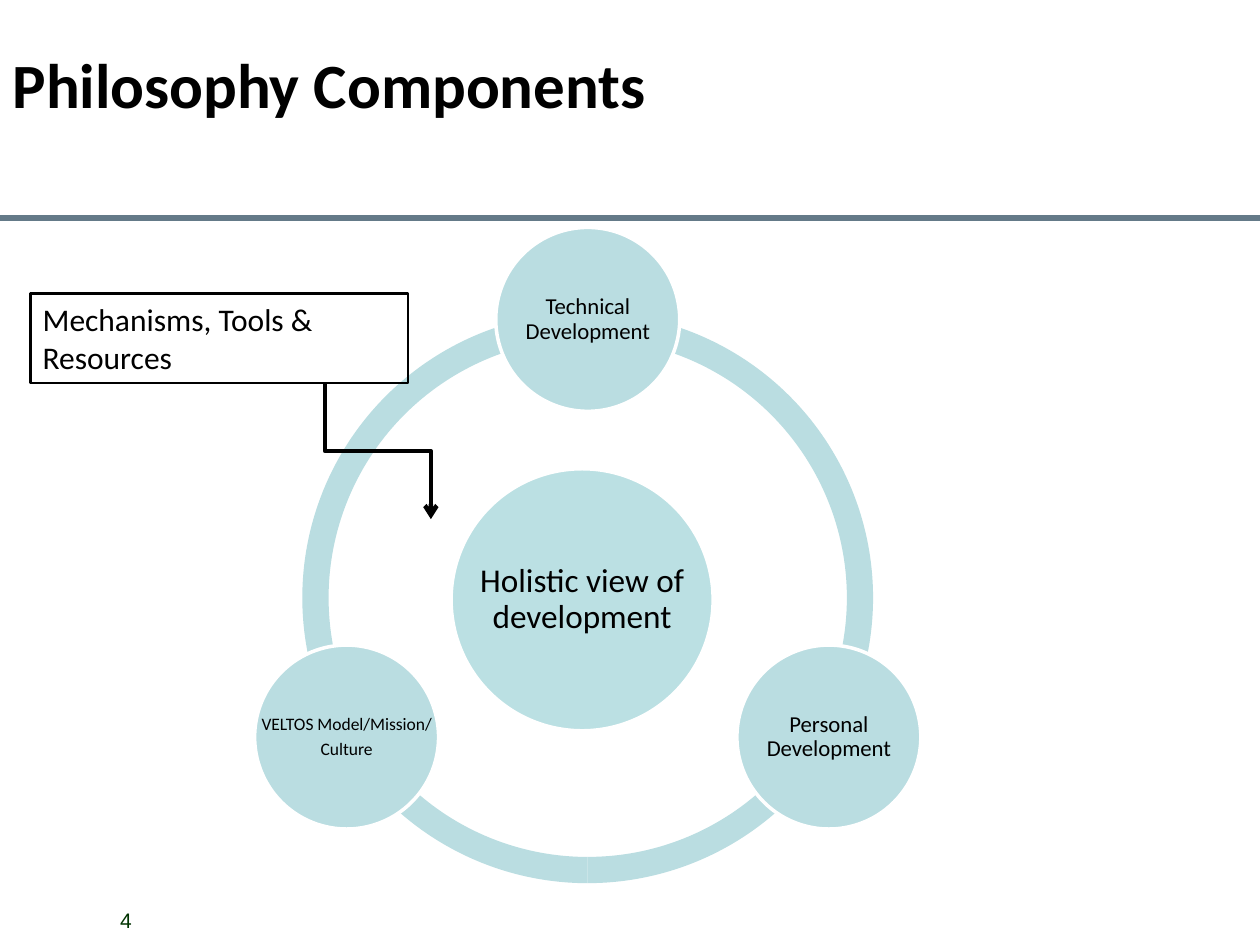
import math

import lxml.etree
import pptx
import pptx.dml.color
import pptx.enum.shapes
import pptx.enum.text
import pptx.oxml.ns
import pptx.util

Inches = pptx.util.Inches
Pt = pptx.util.Pt
RGBColor = pptx.dml.color.RGBColor
SHAPE = pptx.enum.shapes.MSO_SHAPE
CONNECTOR = pptx.enum.shapes.MSO_CONNECTOR
ALIGN = pptx.enum.text.PP_ALIGN
ANCHOR = pptx.enum.text.MSO_ANCHOR

BLACK = RGBColor(0x00, 0x00, 0x00)
WHITE = RGBColor(0xFF, 0xFF, 0xFF)
SLATE = RGBColor(0x64, 0x7A, 0x88)
DARK_GREEN = RGBColor(0x00, 0x33, 0x00)
RING_TEAL = RGBColor(0xBA, 0xDD, 0xE1)
CENTRE_TEAL = RGBColor(0xBB, 0xE0, 0xE3)

NODES = [
    (["Technical Development"], -90, 13, 0.02),
    (["Personal Development"], 30, 13, 0.02),
    (["VELTOS Model/Mission/", "Culture"], 150, 10, 0.01),
]


def write_text(shape, paragraphs, size, color=BLACK, font="Calibri", bold=False,
               align=ALIGN.LEFT, anchor=ANCHOR.MIDDLE, inset=None,
               line_spacing=None, space_after=None):
    """Fill a shape with formatted paragraphs."""
    frame = shape.text_frame
    frame.text = "\n".join(paragraphs)
    frame.word_wrap = True
    frame.vertical_anchor = anchor
    if inset is not None:
        frame.margin_left = frame.margin_right = Inches(inset)
        frame.margin_top = frame.margin_bottom = Inches(inset)
    for paragraph in frame.paragraphs:
        paragraph.alignment = align
        paragraph.line_spacing = line_spacing
        paragraph.space_after = space_after
        paragraph.font.name = font
        paragraph.font.size = Pt(size)
        paragraph.font.bold = bold
        paragraph.font.color.rgb = color


def add_preset(slide, preset, box, fill=None, line=None, width=1):
    """Add a shadowless preset shape with an optional fill and line."""
    shape = slide.shapes.add_shape(preset, *map(Inches, box))
    shape.shadow.inherit = False
    if fill is None:
        shape.fill.background()
    else:
        shape.fill.solid()
        shape.fill.fore_color.rgb = fill
    if line is None:
        shape.line.fill.background()
    else:
        shape.line.color.rgb = line
        shape.line.width = Pt(width)
    return shape


def add_line(slide, kind, begin, end, color, width):
    """Add a shadowless connector between two points."""
    connector = slide.shapes.add_connector(kind, *map(Inches, (*begin, *end)))
    connector.line.color.rgb = color
    connector.line.width = Pt(width)
    properties = connector._element.spPr
    lxml.etree.SubElement(properties, pptx.oxml.ns.qn("a:effectLst"))
    return connector


def add_title(slide, box):
    """Place and format the title."""
    title = slide.shapes.title
    title.left, title.top, title.width, title.height = map(Inches, box)
    write_text(title, ["Philosophy Components"], 36, bold=True)


def add_slide_number(slide, box):
    """Add the slide number."""
    number = slide.shapes.add_textbox(*map(Inches, box))
    write_text(number, ["4"], 12, color=DARK_GREEN, font="Arial", align=ALIGN.CENTER)


def add_circle(slide, box, fill, paragraphs, size, inset):
    """Add a circle with a label spanning its full width."""
    add_preset(slide, SHAPE.OVAL, box, fill=fill, line=WHITE, width=2)
    label = slide.shapes.add_textbox(*map(Inches, box))
    write_text(label, paragraphs, size, align=ALIGN.CENTER, inset=inset,
               line_spacing=0.9, space_after=Pt(size * 0.35))


def add_cycle(slide, box):
    """Draw the ring of arcs, the central circle and the three outer circles."""
    left, top, width, height = box
    for start, end in [(90, 162), (18, 90), (162, 18)]:
        arc = add_preset(slide, SHAPE.BLOCK_ARC, box, fill=RING_TEAL)
        arc.adjustments[0] = start * 0.6
        arc.adjustments[1] = end * 0.6
        arc.adjustments[2] = 0.046
    add_circle(slide, (left + 1.18, top + 1.24, 2.08, 2.08), CENTRE_TEAL,
               ["Holistic view of development"], 19, 0.03)
    diameter, radius = 1.46, 2.21
    for paragraphs, degrees, size, inset in NODES:
        angle = math.radians(degrees)
        node_left = left + width / 2 + radius * math.cos(angle) - diameter / 2
        node_top = top + height / 2 + radius * math.sin(angle) - diameter / 2
        add_circle(slide, (node_left, node_top, diameter, diameter), RING_TEAL,
                   paragraphs, size, inset)


def add_callout(slide, box):
    """Add the boxed note and its downward elbow arrow."""
    left, top, width, height = box
    note = add_preset(slide, SHAPE.RECTANGLE, box, line=BLACK, width=1.5)
    write_text(note, ["Mechanisms, Tools & Resources"], 18, anchor=ANCHOR.TOP)

    run, drop = 0.84, 1.08
    centre_x = left + 2.34 + run / 2
    centre_y = top + height + drop / 2
    arrow = add_line(slide, CONNECTOR.ELBOW,
                     (centre_x + drop / 2, centre_y - run / 2),
                     (centre_x - drop / 2, centre_y + run / 2), BLACK, 2.5)
    arrow._element.spPr.find(pptx.oxml.ns.qn("a:xfrm")).set("rot", str(270 * 60000))
    outline = arrow.line._get_or_add_ln()
    lxml.etree.SubElement(outline, pptx.oxml.ns.qn("a:tailEnd"), type="arrow")


def main():
    """Build and save the presentation."""
    presentation = pptx.Presentation()
    presentation.slide_width = Inches(10)
    presentation.slide_height = Inches(7.5)
    slide = presentation.slides.add_slide(presentation.slide_layouts[5])
    add_line(slide, CONNECTOR.STRAIGHT, (0, 1.73), (10, 1.73), SLATE, 3)
    add_slide_number(slide, (0.5, 7.15, 1, 0.3))
    add_cycle(slide, (2.4, 2.48, 4.53, 4.53))
    add_title(slide, (0, 0.08, 10, 1.17))
    add_callout(slide, (0.24, 2.33, 3, 0.71))
    presentation.save("out.pptx")


if __name__ == "__main__":
    main()
